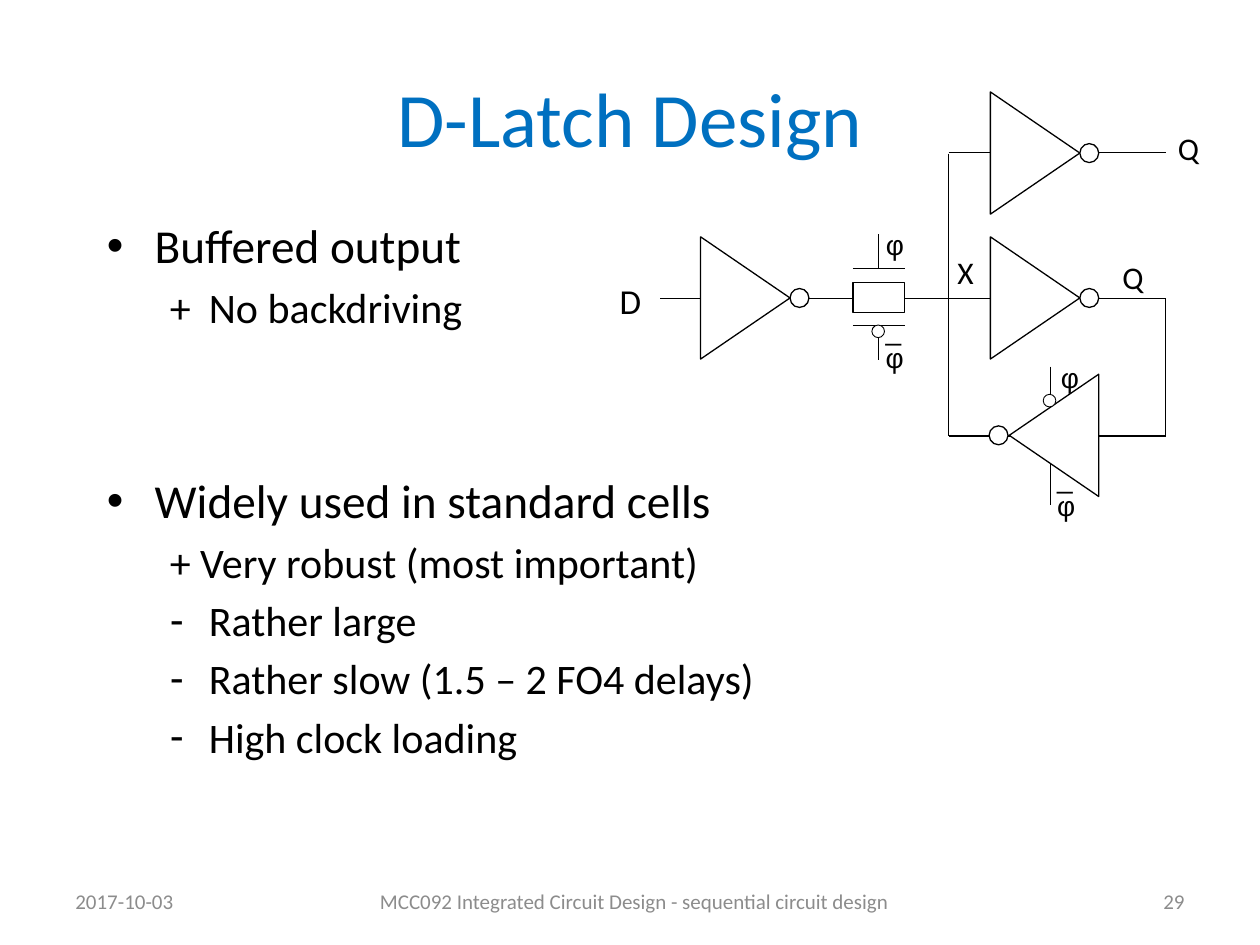
from dataclasses import dataclass

from lxml.etree import SubElement
from pptx import Presentation
from pptx.dml.color import RGBColor
from pptx.enum.shapes import MSO_CONNECTOR as Connector, MSO_SHAPE as Shape
from pptx.enum.text import MSO_ANCHOR as Anchor, PP_ALIGN as Align
from pptx.oxml.ns import qn
from pptx.util import Emu, Pt

PX = 9144
BLACK, WHITE, BLUE, GREY = "000000", "FFFFFF", "0070C0", "8C8C8C"
THIN, NORMAL = 0.5, 0.75
Box = tuple[int, int, int, int]


@dataclass(frozen=True)
class Wire:
    """A straight wire between two points."""
    start: tuple[int, int]
    end: tuple[int, int]
    width: float = THIN


@dataclass(frozen=True)
class Inverter:
    """A triangle gate with its output bubble."""
    left: int
    top: int
    bubble_shift: int = 84
    rotation: int = 90


@dataclass(frozen=True)
class Label:
    """A signal name in the circuit."""
    text: str
    box: Box
    size: int = 18
    align: Align = Align.LEFT
    leading: int | None = None


@dataclass(frozen=True)
class Point:
    """A line of the bulleted text."""
    text: str
    bullet: str = ""
    level: int = 0
    before: float = 4.5


WIRES = [
    Wire((753, 121), (925, 121), NORMAL),
    Wire((524, 237), (925, 237), NORMAL),
    Wire((753, 346), (925, 346), NORMAL),
    Wire((753, 122), (753, 346)),
    Wire((925, 237), (925, 347)),
    Wire((834, 291), (834, 401)),
    Wire((677, 213), (718, 213)),
    Wire((677, 258), (718, 258)),
    Wire((697, 186), (697, 213)),
    Wire((697, 258), (697, 286)),
]
INVERTERS = [
    Inverter(543, 201),
    Inverter(773, 201),
    Inverter(773, 86),
    Inverter(788, 310, bubble_shift=-3, rotation=270),
]
CLOCK_BUBBLES = [(692, 258), (828, 313)]
LABELS = [
    Label("D", (482, 217, 34, 38), size=20),
    Label("X", (750, 196, 34, 35)),
    Label("Q", (925, 105, 34, 34), align=Align.CENTER, leading=16),
    Label("Q", (881, 208, 34, 34), align=Align.CENTER, leading=16),
]
CLOCKS = [(703, 181), (842, 286)]
INVERTED_CLOCKS = [(703, 250, 73, 48), (839, 367, 39, 71)]
POINTS = [
    Point("Buffered output", "•", before=5.4),
    Point("+\tNo backdriving", level=1),
    Point("Widely used in standard cells", "•", before=80),
    Point("+ Very robust (most important)", level=1),
    Point("Rather large", "-", 1),
    Point("Rather slow (1.5 – 2 FO4 delays)", "-", 1),
    Point("High clock loading", "-", 1),
]
FOOTERS = [
    ("2017-10-03", (50, 695, 233, 40), Align.LEFT),
    ("MCC092 Integrated Circuit Design - sequential circuit design",
     (287, 695, 433, 40), Align.CENTER),
    ("29", (717, 695, 233, 40), Align.RIGHT),
]


def px(length: int) -> Emu:
    """Turn a length in px into EMU."""
    return Emu(length * PX)


def color(value: str) -> RGBColor:
    """Turn a hex string into a colour."""
    return RGBColor.from_string(value)


def add_frame(slide, box: Box, inset: bool = True, anchor: Anchor = Anchor.TOP):
    """Add a wrapping text box and return its text frame."""
    frame = slide.shapes.add_textbox(*map(px, box)).text_frame
    frame.word_wrap = True
    frame.vertical_anchor = anchor
    frame.margin_left = frame.margin_right = px(10 if inset else 0)
    frame.margin_top = frame.margin_bottom = px(5 if inset else 0)
    return frame


def write(frame, text: str, *, size: int, font: str = "Calibri", ink: str = BLACK,
          align: Align = Align.LEFT, leading: int | None = None, before: float = 0,
          indent: int = 0, hang: int = 0, bullet: str = "") -> None:
    """Write a paragraph into a text frame."""
    paragraph = frame.paragraphs[0]
    if paragraph.runs:
        paragraph = frame.add_paragraph()
    paragraph.alignment = align
    paragraph.space_before = Pt(before)
    if leading:
        paragraph.line_spacing = Pt(leading)
    run = paragraph.add_run()
    run.text = text
    run.font.size, run.font.name = Pt(size), font
    run.font.color.rgb = color(ink)
    properties = paragraph._p.get_or_add_pPr()
    properties.set("marL", str(px(indent)))
    properties.set("indent", str(px(-hang)))
    if bullet:
        SubElement(properties, qn("a:buFont")).set("typeface", "Arial")
        SubElement(properties, qn("a:buChar")).set("char", bullet)


def draw_wire(slide, wire: Wire) -> None:
    """Draw a wire."""
    line = slide.shapes.add_connector(
        Connector.STRAIGHT, *map(px, wire.start + wire.end))
    line.line.color.rgb = color(BLACK)
    line.line.width = Pt(wire.width)
    SubElement(line._element.spPr, qn("a:effectLst"))


def draw_outline(slide, kind: Shape, box: Box, width: float = NORMAL,
                 rotation: int = 0) -> None:
    """Draw a white shape with a black outline."""
    shape = slide.shapes.add_shape(kind, *map(px, box))
    shape.shadow.inherit = False
    shape.rotation = rotation
    shape.fill.solid()
    shape.fill.fore_color.rgb = color(WHITE)
    shape.line.color.rgb = color(BLACK)
    shape.line.width = Pt(width)


def draw_inverter(slide, gate: Inverter) -> None:
    """Draw an inverter."""
    draw_outline(slide, Shape.ISOSCELES_TRIANGLE, (gate.left, gate.top, 97, 71),
                 rotation=gate.rotation)
    draw_outline(slide, Shape.OVAL,
                 (gate.left + gate.bubble_shift, gate.top + 28, 15, 15))


def draw_circuit(slide) -> None:
    """Draw the latch with its signal names."""
    for wire in WIRES:
        draw_wire(slide, wire)
    for gate in INVERTERS:
        draw_inverter(slide, gate)
    draw_outline(slide, Shape.RECTANGLE, (677, 224, 41, 24))
    for left, top in CLOCK_BUBBLES:
        draw_outline(slide, Shape.OVAL, (left, top, 10, 10), THIN)
    for label in LABELS:
        write(add_frame(slide, label.box), label.text, size=label.size,
              align=label.align, leading=label.leading)
    for left, top in CLOCKS:
        write(add_frame(slide, (left, top, 15, 24), inset=False), "φ",
              size=16, font="Arial")
    for box in INVERTED_CLOCKS:
        clock = add_frame(slide, box, inset=False)
        for symbol, leading in (("_", 18), ("φ", 16)):
            write(clock, symbol, size=16, font="Arial", leading=leading)


def main() -> None:
    """Build the slide and save it."""
    deck = Presentation()
    deck.slide_width, deck.slide_height = px(1000), px(750)
    slide = deck.slides.add_slide(deck.slide_layouts[6])
    write(add_frame(slide, (50, 30, 900, 125), anchor=Anchor.MIDDLE),
          "D-Latch Design", size=44, ink=BLUE, align=Align.CENTER)
    for text, box, align in FOOTERS:
        write(add_frame(slide, box, anchor=Anchor.MIDDLE), text,
              size=12, ink=GREY, align=align)
    body = add_frame(slide, (75, 167, 850, 500))
    for point in POINTS:
        size, indent, hang = ((27, 38, 38), (24, 81, 31))[point.level]
        write(body, point.text, size=size, before=point.before,
              indent=indent, hang=hang, bullet=point.bullet)
    draw_circuit(slide)
    deck.save("out.pptx")


if __name__ == "__main__":
    main()
